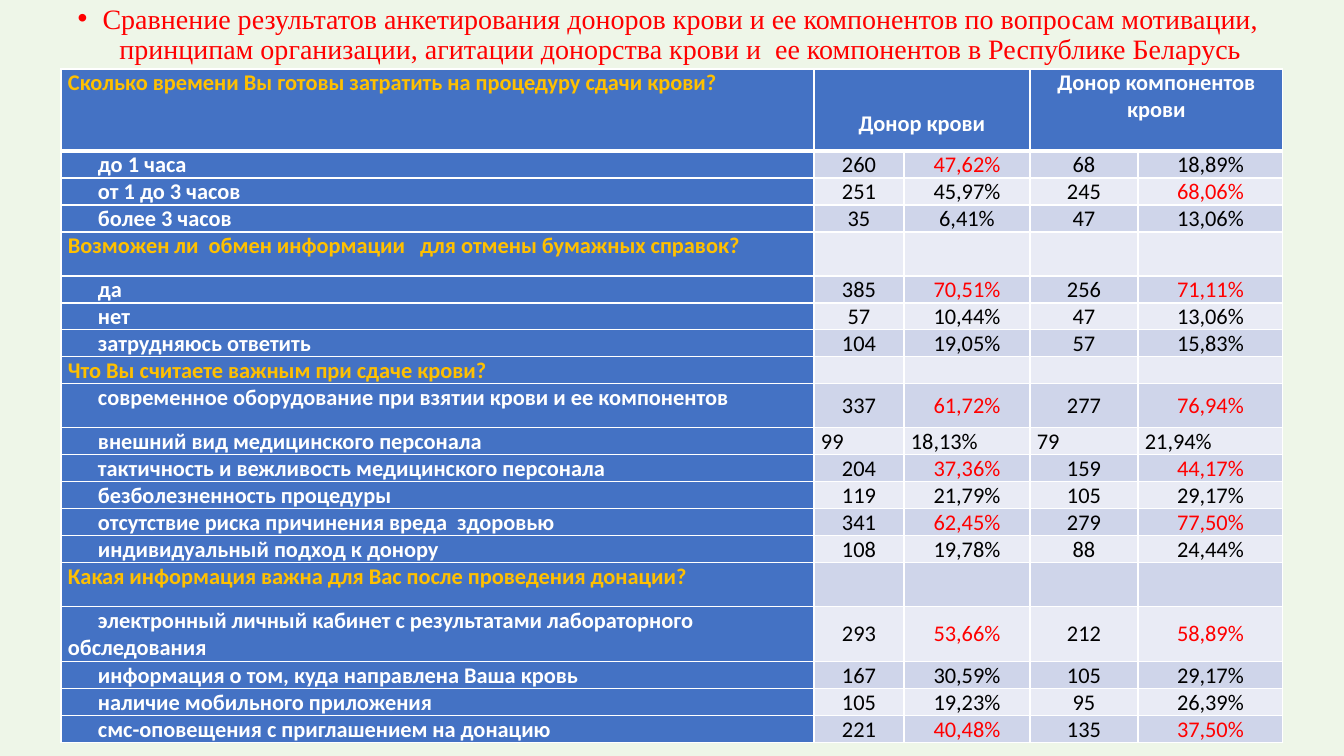
from dataclasses import dataclass
from typing import Any

from lxml import etree
from pptx import Presentation
from pptx import util as u
from pptx.dml.color import RGBColor
from pptx.enum import text
from pptx.oxml import ns

SCALE = 914400 / 100.8  # EMU in one px

WHITE, BLACK, RED, GOLD, BLUE = "FFFFFF", "000000", "FF0000", "FFC000", "4472C4"
BACKGROUND = "EEF6E8"
BANDS = ("E9EBF5", "CFD5EA")

COLUMN_WIDTHS = (753, 90, 126, 108, 145)
HEADER_HEIGHT, ROW_HEIGHT, TALL_HEIGHT, TWO_LINE_HEIGHT = 82, 27, 44, 55
LABEL_INDENT = 30

LEFT, CENTER = text.PP_ALIGN.LEFT, text.PP_ALIGN.CENTER
TOP, MIDDLE, BOTTOM = (text.MSO_ANCHOR.TOP, text.MSO_ANCHOR.MIDDLE,
                       text.MSO_ANCHOR.BOTTOM)

TITLE = ("Сравнение результатов анкетирования доноров крови и ее компонентов "
         "по вопросам мотивации, принципам организации, агитации донорства "
         "крови и  ее компонентов в Республике Беларусь")


@dataclass
class Question:
    label: str
    height: int = ROW_HEIGHT


@dataclass
class Answer:
    label: str
    values: tuple[str, str, str, str]
    red: tuple[int, ...] = ()  # columns shown in red
    height: int = ROW_HEIGHT
    alignment: Any = CENTER
    anchor: Any = MIDDLE


BOTH = (2, 4)
ROWS = [
    Question("Сколько времени Вы готовы затратить на процедуру сдачи крови?",
             HEADER_HEIGHT),
    Answer("до 1 часа", ("260", "47,62%", "68", "18,89%"), (2,)),
    Answer("от 1 до 3 часов", ("251", "45,97%", "245", "68,06%"), (4,)),
    Answer("более 3 часов", ("35", "6,41%", "47", "13,06%")),
    Question("Возможен ли  обмен информации   для отмены бумажных справок?",
             TALL_HEIGHT),
    Answer("да", ("385", "70,51%", "256", "71,11%"), BOTH),
    Answer("нет", ("57", "10,44%", "47", "13,06%")),
    Answer("затрудняюсь ответить", ("104", "19,05%", "57", "15,83%")),
    Question("Что Вы считаете важным при сдаче крови?"),
    Answer("современное оборудование при взятии крови и ее компонентов",
           ("337", "61,72%", "277", "76,94%"), BOTH, TALL_HEIGHT),
    Answer("внешний вид медицинского персонала",
           ("99", "18,13%", "79", "21,94%"), alignment=LEFT, anchor=TOP),
    Answer("тактичность и вежливость медицинского персонала",
           ("204", "37,36%", "159", "44,17%"), BOTH),
    Answer("безболезненность процедуры", ("119", "21,79%", "105", "29,17%")),
    Answer("отсутствие риска причинения вреда  здоровью",
           ("341", "62,45%", "279", "77,50%"), BOTH),
    Answer("индивидуальный подход к донору", ("108", "19,78%", "88", "24,44%")),
    Question("Какая информация важна для Вас после проведения донации?",
             TALL_HEIGHT),
    Answer("электронный личный кабинет с результатами лабораторного обследования",
           ("293", "53,66%", "212", "58,89%"), BOTH, TWO_LINE_HEIGHT),
    Answer("информация о том, куда направлена Ваша кровь",
           ("167", "30,59%", "105", "29,17%")),
    Answer("наличие мобильного приложения", ("105", "19,23%", "95", "26,39%")),
    Answer("смс-оповещения с приглашением на донацию",
           ("221", "40,48%", "135", "37,50%"), BOTH),
]


def px(length: int) -> u.Emu:
    return u.Emu(round(length * SCALE))


def rgb(value: str) -> RGBColor:
    return RGBColor.from_string(value)


def apply(target: Any, values: dict[str, Any]) -> None:
    for name, value in values.items():
        setattr(target, name, value)


def add_element(parent: Any, tag: str, **attributes: str) -> Any:
    return etree.SubElement(parent, ns.qn(tag), attributes)


def style_cell(cell: Any, fill: str, top: int = 1, bottom: int = 1) -> None:
    """Set the margins, white borders (in points) and fill of a cell."""
    apply(cell, {"margin_left": px(7), "margin_right": px(7),
                 "margin_top": 0, "margin_bottom": 0})
    properties = cell._tc.get_or_add_tcPr()
    for side, width in zip("LRTB", (1, 1, top, bottom)):
        line = add_element(properties, f"a:ln{side}", w=str(u.Pt(width)))
        add_element(add_element(line, "a:solidFill"), "a:srgbClr", val=WHITE)
    cell.fill.solid()
    cell.fill.fore_color.rgb = rgb(fill)


def write_cell(cell: Any, words: str, color: str, bold: bool = False,
               alignment: Any = LEFT, anchor: Any = TOP, indent: int = 0) -> None:
    cell.vertical_anchor = anchor
    paragraph = cell.text_frame.paragraphs[0]
    paragraph.alignment = alignment
    if indent:
        paragraph._p.get_or_add_pPr().set("indent", str(px(indent)))
    run = paragraph.add_run()
    run.text = words
    apply(run.font, {"name": "Calibri", "size": u.Pt(16), "bold": bold})
    run.font.color.rgb = rgb(color)


def add_title(slide: Any) -> None:
    frame = slide.shapes.add_textbox(px(37), 0, px(1262), px(666)).text_frame
    frame.word_wrap = True
    paragraph = frame.paragraphs[0]
    apply(paragraph, {"alignment": CENTER, "line_spacing": 0.9})
    properties = paragraph._p.get_or_add_pPr()
    properties.set("marL", str(px(25)))
    properties.set("indent", str(px(-25)))
    add_element(properties, "a:buFont", typeface="Arial")
    add_element(properties, "a:buChar", char="•")
    run = paragraph.add_run()
    run.text = TITLE
    apply(run.font, {"name": "Times New Roman", "size": u.Pt(20)})
    run.font.color.rgb = rgb(RED)


def add_survey_table(slide: Any) -> None:
    frame = slide.shapes.add_table(
        len(ROWS), len(COLUMN_WIDTHS), px(61), px(69),
        px(sum(COLUMN_WIDTHS)), px(sum(row.height for row in ROWS)))
    table = frame.table
    for column, width in zip(table.columns, COLUMN_WIDTHS):
        column.width = px(width)

    for index, row in enumerate(ROWS):
        table.rows[index].height = px(row.height)
        cells = list(table.rows[index].cells)
        for column, cell in enumerate(cells):
            fill = BLUE if index == 0 or column == 0 else BANDS[index % 2]
            style_cell(cell, fill, top=3 if index == 1 else 1,
                       bottom=3 if index == 0 else 1)
        if isinstance(row, Question):
            write_cell(cells[0], row.label, GOLD, bold=True)
            for cell in cells[1:]:
                add_element(cell.text_frame.paragraphs[0]._p,
                            "a:endParaRPr", sz="1600")
        else:
            write_cell(cells[0], row.label, WHITE, bold=True, indent=LABEL_INDENT)
            for column, value in enumerate(row.values, start=1):
                write_cell(cells[column], value,
                           RED if column in row.red else BLACK,
                           alignment=row.alignment, anchor=row.anchor)

    # Donor groups, each over two columns of the header
    for column, group, anchor in ((1, "Донор крови", BOTTOM),
                                  (3, "Донор компонентов крови", TOP)):
        cell = table.cell(0, column)
        cell.merge(table.cell(0, column + 1))
        write_cell(cell, group, WHITE, bold=True, alignment=CENTER, anchor=anchor)
    table.cell(0, 1).margin_bottom = px(13)


def main() -> None:
    presentation = Presentation()
    apply(presentation, {"slide_width": px(1344), "slide_height": px(756)})
    slide = presentation.slides.add_slide(presentation.slide_layouts[6])
    slide.background.fill.solid()
    slide.background.fill.fore_color.rgb = rgb(BACKGROUND)
    add_title(slide)
    add_survey_table(slide)
    presentation.save("out.pptx")


if __name__ == "__main__":
    main()
